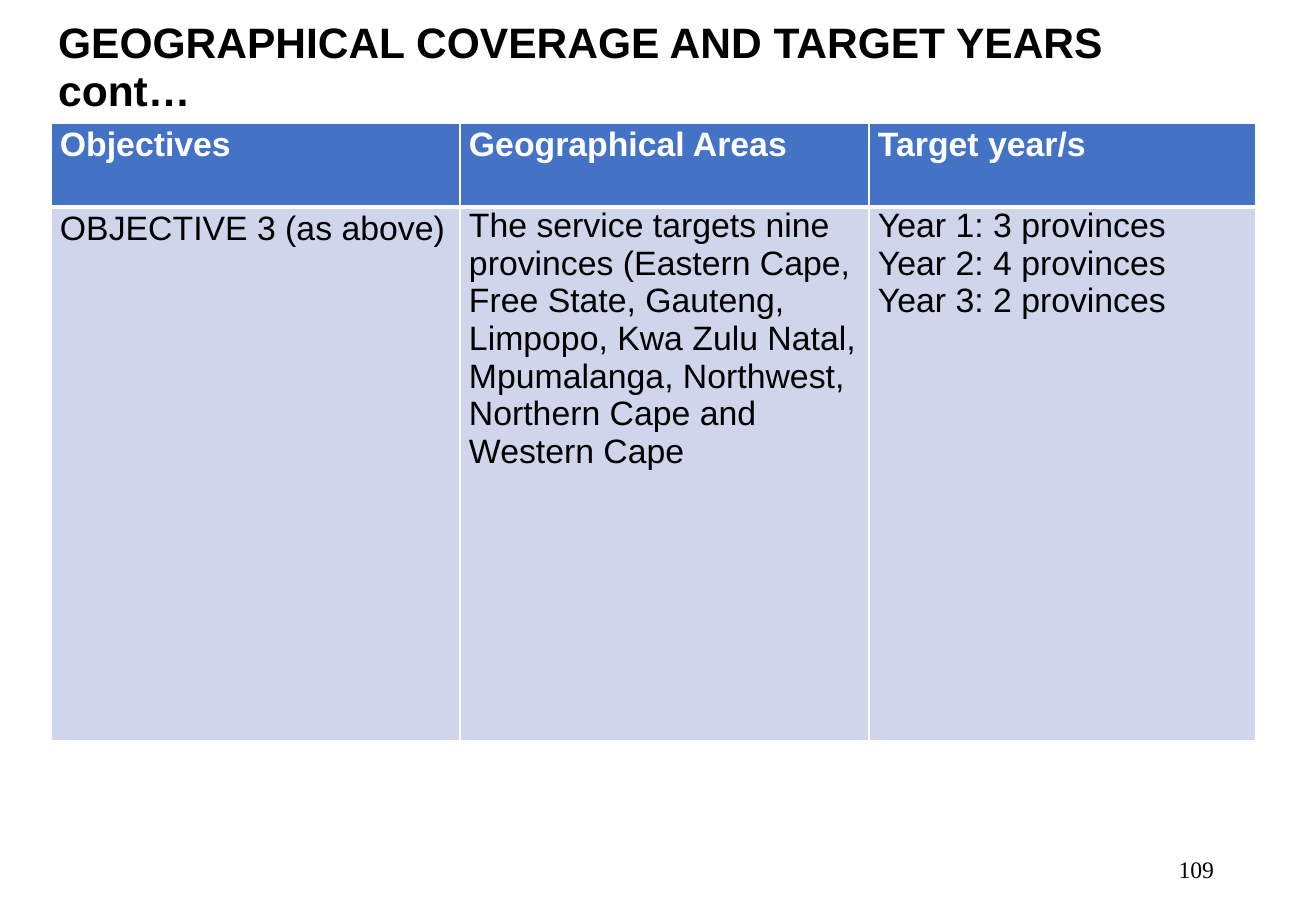
from lxml import etree
from pptx import Presentation
from pptx import util as u
from pptx.dml.color import RGBColor
from pptx.enum import text
from pptx.oxml.ns import qn

TITLE = "GEOGRAPHICAL COVERAGE AND TARGET YEARS cont…"
NUMBER = "109"
HEADS = ["Objectives", "Geographical Areas", "Target year/s"]
BODY = [
    ["OBJECTIVE 3 (as above)"],
    ["The service targets nine provinces (Eastern Cape, Free State, Gauteng, "
     "Limpopo, Kwa Zulu Natal, Mpumalanga, Northwest, Northern Cape and "
     "Western Cape"],
    ["Year 1: 3 provinces", "Year 2: 4 provinces", "Year 3: 2 provinces"],
]
COLORS = {"ink": "000000", "white": "FFFFFF", "head": "4472C4", "body": "CFD5EA"}
WIDTHS = [409, 409, 387]
HEIGHTS = [84, 534]
SCALE = 914400 / 121.5


def px(n):
    return u.Emu(round(n * SCALE))


def rgb(name):
    return RGBColor.from_string(COLORS[name])


def write(para, words, size, color="ink", bold=False, face="Arial"):
    run = para.add_run()
    run.text = words
    font = run.font
    font.name, font.size, font.bold = face, u.Pt(size), bold
    font.color.rgb = rgb(color)


def edge(cell, side, width):
    """Draw one white border; call before the cell is filled."""
    line = etree.SubElement(cell._tc.get_or_add_tcPr(), qn("a:ln" + side),
                            w=str(u.Pt(width)))
    fill = etree.SubElement(line, qn("a:solidFill"))
    etree.SubElement(fill, qn("a:srgbClr"), val=COLORS["white"])


def fill_cell(cell, lines, head, spacing):
    for side in "LRTB":
        joint = side == ("B" if head else "T")
        edge(cell, side, 3 if joint else 1)
    cell.fill.solid()
    cell.fill.fore_color.rgb = rgb("head" if head else "body")
    cell.margin_left = cell.margin_right = px(9)
    cell.margin_top = cell.margin_bottom = 0
    frame = cell.text_frame
    for i, words in enumerate(lines):
        para = frame.add_paragraph() if i else frame.paragraphs[0]
        para.line_spacing = spacing
        write(para, words, 20, "white" if head else "ink", head)


def main():
    deck = Presentation()
    deck.slide_width, deck.slide_height = px(1316), px(911)
    slide = deck.slides.add_slide(deck.slide_layouts[5])

    title = slide.shapes.title
    title.left, title.top, title.width, title.height = map(px, (46, 16, 1204, 104))
    frame = title.text_frame
    frame.auto_size = text.MSO_AUTO_SIZE.NONE
    frame.vertical_anchor = text.MSO_ANCHOR.MIDDLE
    para = frame.paragraphs[0]
    para.alignment = text.PP_ALIGN.LEFT
    para.line_spacing = 0.94
    write(para, TITLE, 25.2, bold=True)

    box = slide.shapes.add_textbox(px(930), px(845), px(296), px(49))
    box.text_frame.word_wrap = True
    box.text_frame.vertical_anchor = text.MSO_ANCHOR.MIDDLE
    para = box.text_frame.paragraphs[0]
    para.alignment = text.PP_ALIGN.RIGHT
    write(para, NUMBER, 14, face="Times New Roman")

    table = slide.shapes.add_table(len(HEIGHTS), len(WIDTHS), px(51), px(123),
                                   px(sum(WIDTHS)), px(sum(HEIGHTS))).table
    for row, high in zip(table.rows, HEIGHTS):
        row.height = px(high)
    for c, wide in enumerate(WIDTHS):
        table.columns[c].width = px(wide)
        fill_cell(table.cell(0, c), [HEADS[c]], True, 1.07)
        fill_cell(table.cell(1, c), BODY[c], False, 1.0 if c else 1.07)

    deck.save("out.pptx")


if __name__ == "__main__":
    main()
